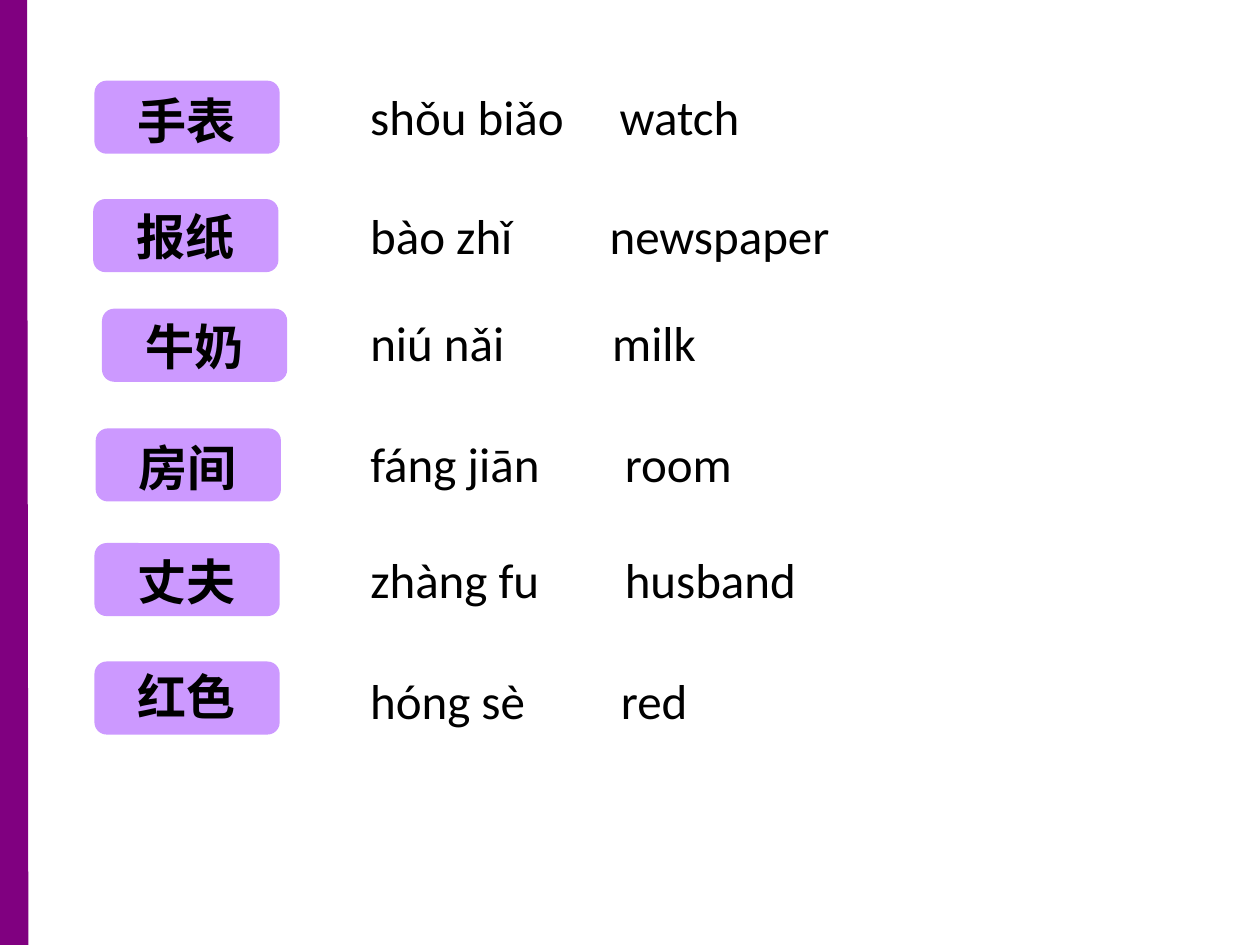
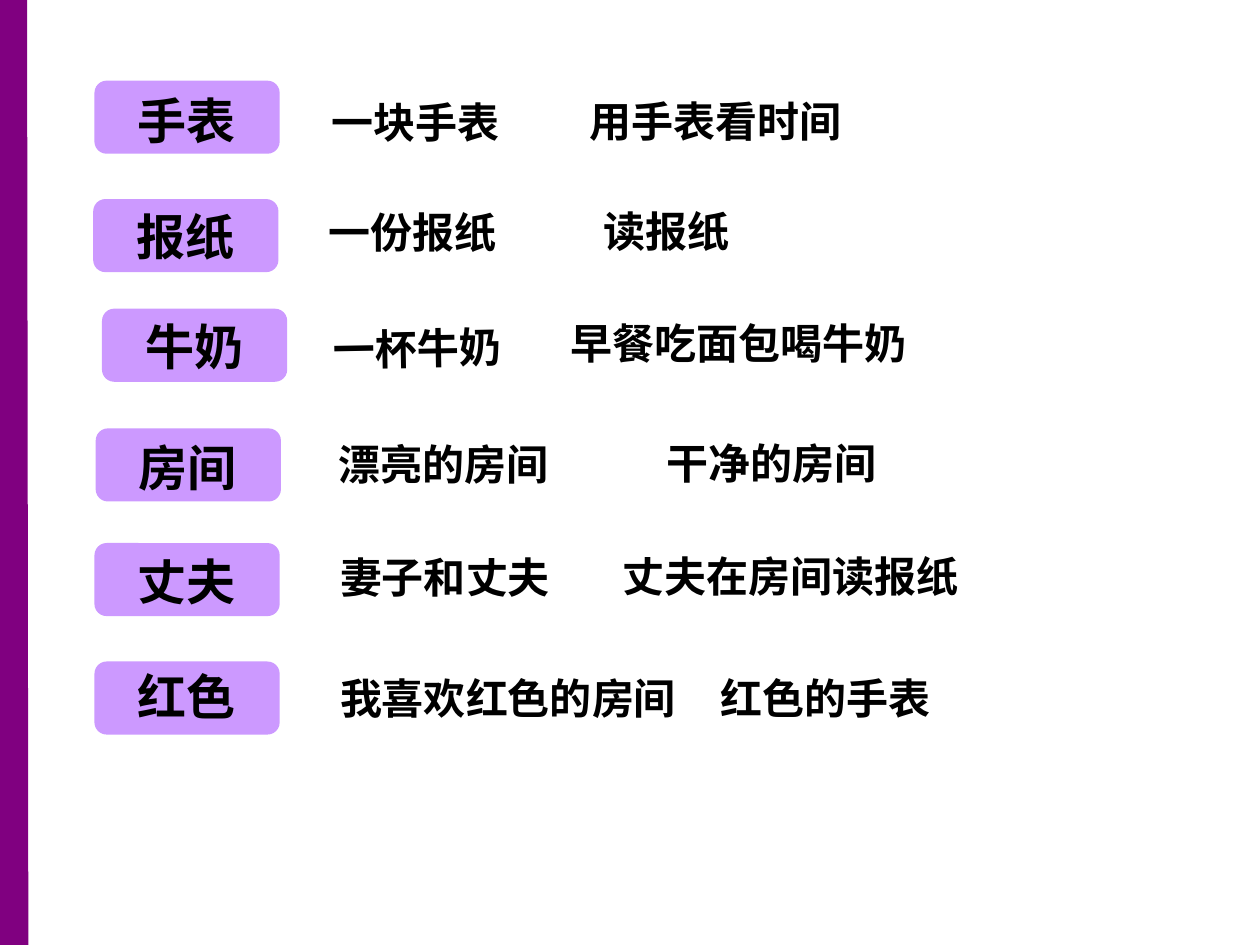
import pptx
import pptx.dml.color
import pptx.enum.shapes
import pptx.enum.text
import pptx.oxml
import pptx.oxml.ns
import pptx.util
from dataclasses import dataclass

Inches = pptx.util.Inches
Pt = pptx.util.Pt
RGB = pptx.dml.color.RGBColor
MID = pptx.enum.text.PP_ALIGN.CENTER
LEFT = pptx.enum.text.PP_ALIGN.LEFT


@dataclass(frozen=True)
class Theme:
    band: RGB = RGB(0x80, 0x00, 0x80)
    badge: RGB = RGB(0xCC, 0x99, 0xFF)
    ink: RGB = RGB(0, 0, 0)
    latin: str = "Calibri"
    han: str = "Noto Sans CJK SC"
    big: int = 28
    small: int = 24


THEME = Theme()
WORD = {"size": Pt(THEME.big), "name": THEME.latin, "bold": True}
GLOSS = {"size": Pt(THEME.big), "name": THEME.latin, "bold": False}
PHRASE = {"size": Pt(THEME.small), "name": THEME.han, "bold": True}

# Word, badge left, badge top, label top
BADGES = [
    ("手表", 0.75, 0.64, 0.67),
    ("报纸", 0.74, 1.58, 1.59),
    ("牛奶", 0.81, 2.45, 2.46),
    ("房间", 0.76, 3.4, 3.42),
    ("丈夫", 0.75, 4.31, 4.33),
    ("红色", 0.75, 5.25, 5.24),
]

# Pinyin, English, top, width, tab stop of the English
GLOSSES = [
    ("shǒu biǎo", "watch", 0.64, 3.94, 1.98),
    ("bào zhǐ", "newspaper", 1.58, 4.53, 1.9),
    ("niú nǎi", "milk", 2.43, 4.55, 1.92),
    ("fáng jiān", "room", 3.39, 4.79, 2.02),
    ("zhàng fu", "husband", 4.31, 4.71, 2.02),
    ("hóng sè", "red", 5.27, 3.94, 1.99),
]

# Phrase, left, top, width, turn
PHRASES = [
    ("一块手表", 2.53, 0.72, 1.55, 0),
    ("用手表看时间", 4.58, 0.71, 2.52, 0),
    ("一份报纸", 2.51, 1.59, 3.26, 0),
    ("读报纸", 4.69, 1.58, 1.57, 0),
    ("一杯牛奶", 2.55, 2.51, 1.55, 359),
    ("早餐吃面包喝牛奶", 4.43, 2.47, 3.01, 0),
    ("漂亮的房间", 2.59, 3.43, 1.93, 0),
    ("干净的房间", 5.19, 3.42, 2.95, 0),
    ("妻子和丈夫", 2.6, 4.33, 2.25, 0),
    ("丈夫在房间读报纸", 4.84, 4.32, 3.06, 0),
    ("我喜欢红色的房间", 2.6, 5.29, 3.02, 0),
    ("红色的手表", 5.62, 5.29, 2.88, 0),
]


def add_text(shapes, text, box, style, align=LEFT):
    """Place one line of styled text and return its box."""
    item = shapes.add_textbox(*map(Inches, box))
    frame = item.text_frame
    frame.word_wrap = True
    para = frame.paragraphs[0]
    para.alignment = align
    run = para.add_run()
    run.text = text
    for key, value in style.items():
        setattr(run.font, key, value)
    run.font.color.rgb = THEME.ink
    face = pptx.oxml.parse_xml(
        f'<a:ea {pptx.oxml.ns.nsdecls("a")} typeface="{THEME.han}"/>')
    run.font._element.find(pptx.oxml.ns.qn("a:latin")).addnext(face)
    return item


def add_band(slide):
    """Draw the purple band down the left edge."""
    kind = pptx.enum.shapes.MSO_CONNECTOR.STRAIGHT
    ends = map(Inches, (0.1, 7.5, 0.09, -0.02))
    band = slide.shapes.add_connector(kind, *ends)
    band.line.color.rgb = THEME.band
    band.line.width = Pt(18)
    band._element.spPr.append(pptx.oxml.parse_xml(
        f'<a:effectLst {pptx.oxml.ns.nsdecls("a")}/>'))


def add_badge(slide, word, left, top, label):
    """Group a rounded badge with its word."""
    shapes = slide.shapes.add_group_shape().shapes
    kind = pptx.enum.shapes.MSO_SHAPE.ROUNDED_RECTANGLE
    badge = shapes.add_shape(
        kind, *map(Inches, (left, top, 1.47, 0.58)))
    badge.shadow.inherit = False
    badge.fill.solid()
    badge.fill.fore_color.rgb = THEME.badge
    badge.line.fill.background()
    add_text(shapes, word, (left + 0.04, label, 1.38, 0.57), WORD, MID)


def add_gloss(slide, sound, sense, top, width, stop):
    """Write pinyin, then English at a tab stop."""
    item = add_text(slide.shapes, f"{sound}\t{sense}",
                    (2.84, top, width, 0.57), GLOSS)
    props = item.text_frame.paragraphs[0]._p.get_or_add_pPr()
    props.append(pptx.oxml.parse_xml(
        f'<a:tabLst {pptx.oxml.ns.nsdecls("a")}>'
        f'<a:tab pos="{Inches(stop)}" algn="l"/></a:tabLst>'))


def add_phrase(slide, text, left, top, width, turn):
    """Write one sample phrase."""
    item = add_text(slide.shapes, text, (left, top, width, 0.5), PHRASE)
    item.rotation = turn


def add_page(deck, draw, rows):
    """Build a page: shared band and badges, plus its own rows."""
    slide = deck.slides.add_slide(deck.slide_layouts[6])
    add_band(slide)
    for row in BADGES:
        add_badge(slide, *row)
    for row in rows:
        draw(slide, *row)


def main():
    deck = pptx.Presentation()
    deck.slide_width, deck.slide_height = Inches(10), Inches(7.5)
    add_page(deck, add_gloss, GLOSSES)
    add_page(deck, add_phrase, PHRASES)
    deck.save("out.pptx")


if __name__ == "__main__":
    main()
